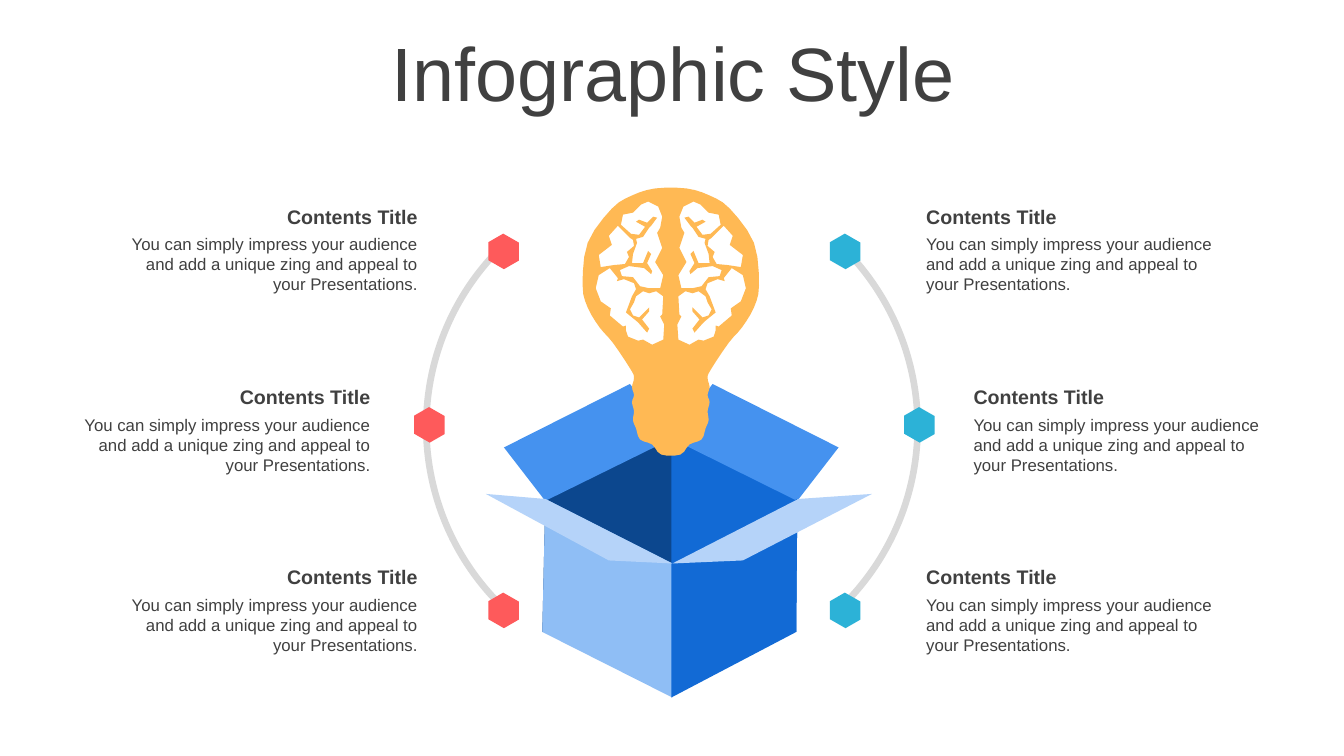
from pptx import Presentation
from pptx.dml.color import RGBColor
from pptx.enum import shapes as kinds, text as txt
from pptx.util import Pt

INK = RGBColor(0x40, 0x40, 0x40)
GREY = RGBColor(0xD9, 0xD9, 0xD9)
RED = RGBColor(0xFE, 0x5A, 0x5B)
TEAL = RGBColor(0x2C, 0xB2, 0xD7)
AMBER = RGBColor(0xFF, 0xB9, 0x54)
NAVY = RGBColor(0x0C, 0x47, 0x8E)
BLUE = RGBColor(0x12, 0x6A, 0xD5)
MID_BLUE = RGBColor(0x45, 0x92, 0xEF)
SKY = RGBColor(0x8F, 0xBE, 0xF5)
PALE = RGBColor(0xB5, 0xD3, 0xF9)

TITLE = "Infographic Style"
HEADING = "Contents Title"
DETAIL = ("You can simply impress your audience and add a unique zing "
          "and appeal to your Presentations.")

ROWS = [
    {"text_gap": 174.5, "marker_gap": 122, "marker_y": 179.6},
    {"text_gap": 208.3, "marker_gap": 175, "marker_y": 303.5},
    {"text_gap": 174.5, "marker_gap": 122, "marker_y": 436},
]
SIDES = [
    {"sign": 1, "color": TEAL, "align": txt.PP_ALIGN.LEFT, "arc": (313.6, 44.68)},
    {"sign": -1, "color": RED, "align": txt.PP_ALIGN.RIGHT, "arc": (135.32, 226.4)},
]

GRID = Pt(0.72)
BOX = [
    (NAVY, [(667, 434), (667, 593), (538, 627), (541, 495)]),
    (BLUE, [(666, 434), (666, 594), (790, 627), (791, 495)]),
    (MID_BLUE, [(667, 435), (625, 381), (500, 444), (541, 497)]),
    (MID_BLUE, [(707, 381), (666, 435), (791, 497), (832, 444)]),
    (SKY, [(667, 559), (667, 692), (538, 627), (541, 495)]),
    (BLUE, [(790, 627), (666, 692), (666, 559), (791, 495)]),
    (PALE, [(667, 559), (737, 556), (865, 490), (792, 495)]),
    (PALE, [(541, 495), (667, 559), (604, 556), (482, 490)]),
]
BULB_AXIS = 665.5
BULB_HALF = [
    (681, 187), (704, 194), (724, 207), (748, 241), (753, 283), (748, 305),
    (736, 325), (723, 340), (705, 367), (702, 375), (704, 384), (702, 392),
    (704, 399), (702, 408), (703, 417), (700, 425), (696, 436), (684, 441),
    (675, 451),
]
BRAIN_HALF = [
    [(687, 309), (687, 305), (697, 315), (703, 313), (706, 307), (702, 300),
     (700, 294), (693, 289), (687, 291), (680, 289), (673, 294), (674, 312),
     (676, 314), (672, 322), (673, 337), (684, 342), (693, 337), (698, 338),
     (708, 334), (710, 328), (710, 323), (713, 324), (726, 313), (725, 306),
     (735, 299), (740, 286), (737, 273), (726, 266), (718, 276), (719, 279),
     (712, 277), (702, 281), (700, 287), (704, 294), (710, 310), (699, 319),
     (697, 321), (689, 330), (687, 326), (694, 317)],
    [(691, 225), (697, 233), (705, 232), (715, 223), (713, 213), (703, 211),
     (695, 203), (688, 200), (678, 205), (674, 215), (676, 226), (679, 231),
     (674, 246), (681, 260), (673, 273), (676, 286), (687, 286), (696, 284),
     (703, 275), (714, 274), (716, 268), (707, 264), (692, 266), (685, 272),
     (684, 269), (689, 261), (685, 252), (688, 249), (693, 261), (704, 261),
     (703, 252), (699, 241), (700, 237), (693, 235), (687, 226), (685, 224),
     (679, 216), (683, 215), (689, 221), (697, 218), (700, 220)],
    [(718, 224), (706, 236), (703, 238), (702, 244), (709, 250), (707, 255),
     (711, 262), (722, 263), (735, 265), (737, 253), (724, 243), (727, 234)],
]


def mirror(points):
    return [(2 * BULB_AXIS - x, y) for x, y in reversed(points)]


def smooth(points, steps=3):
    curve = []
    for i, b in enumerate(points):
        a, c, d = points[i - 1], points[(i + 1) % len(points)], points[(i + 2) % len(points)]
        for t in (step / steps for step in range(steps)):
            curve.append(tuple(
                b[k] + t / 2 * (c[k] - a[k]
                                + t * (2 * a[k] - 5 * b[k] + 4 * c[k] - d[k])
                                + t * t * (3 * b[k] - a[k] - 3 * c[k] + d[k]))
                for k in (0, 1)))
    return curve


def paint(shape, color):
    shape.shadow.inherit = False
    shape.fill.solid()
    shape.fill.fore_color.rgb = color
    shape.line.fill.background()


def outline(slide, contours, color):
    scaled = [[(x * GRID, y * GRID) for x, y in points] for points in contours]
    builder = slide.shapes.build_freeform(*scaled[0][0], scale=1.0)
    builder.add_line_segments(scaled[0][1:], close=True)
    for points in scaled[1:]:
        builder.move_to(*points[0])
        builder.add_line_segments(points[1:], close=True)
    paint(builder.convert_to_shape(), color)


def write(frame, words, size, align, bold=False):
    frame.word_wrap = True
    frame.text = words
    paragraph = frame.paragraphs[0]
    paragraph.alignment = align
    font = paragraph.runs[0].font
    font.name, font.size, font.bold = "Arial", Pt(size), bold
    font.color.rgb = INK


def preset(slide, kind, center_x, center_y, width, height, color):
    shape = slide.shapes.add_shape(kind, Pt(center_x - width / 2), Pt(center_y - height / 2),
                                   Pt(width), Pt(height))
    paint(shape, color)
    return shape


def add_side(slide, side):
    sign = side["sign"]
    arc = preset(slide, kinds.MSO_SHAPE.BLOCK_ARC, 480 - 4.3 * sign, 304.6, 364.3, 364.3, GREY)
    for i, degrees in enumerate(side["arc"]):
        arc.adjustments[i] = degrees * 0.6
    arc.adjustments[2] = 0.013
    for i, row in enumerate(ROWS):
        marker = preset(slide, kinds.MSO_SHAPE.HEXAGON, 481.7 + sign * row["marker_gap"],
                        row["marker_y"], 25.2, 22.3, side["color"])
        marker.adjustments[0] = 0.29
        marker.rotation = 330
        edge = 480 + sign * row["text_gap"]
        left = edge if sign > 0 else edge - 224
        top = 142.6 + 128.85 * i
        for words, y, height, size in ((HEADING, top, 24.2, 14), (DETAIL, top + 20.9, 51, 12)):
            box = slide.shapes.add_textbox(Pt(left), Pt(y), Pt(224), Pt(height))
            write(box.text_frame, words, size, side["align"], bold=words == HEADING)


def main():
    deck = Presentation()
    deck.slide_width, deck.slide_height = Pt(960), Pt(540)
    slide = deck.slides.add_slide(deck.slide_layouts[5])
    title = slide.shapes.title
    title.left, title.top, title.width, title.height = Pt(25.2), Pt(26.6), Pt(911.5), Pt(56.9)
    frame = title.text_frame
    write(frame, TITLE, 54, txt.PP_ALIGN.CENTER)
    frame.auto_size = txt.MSO_AUTO_SIZE.NONE
    frame.vertical_anchor = txt.MSO_ANCHOR.MIDDLE
    frame.paragraphs[0].line_spacing = 0.9

    for color, corners in BOX:
        outline(slide, [corners], color)
    bulb = smooth(BULB_HALF + mirror(BULB_HALF))
    lobes = BRAIN_HALF + [mirror(lobe) for lobe in BRAIN_HALF]
    outline(slide, [bulb] + lobes, AMBER)
    for side in SIDES:
        add_side(slide, side)
    deck.save("out.pptx")


if __name__ == "__main__":
    main()
